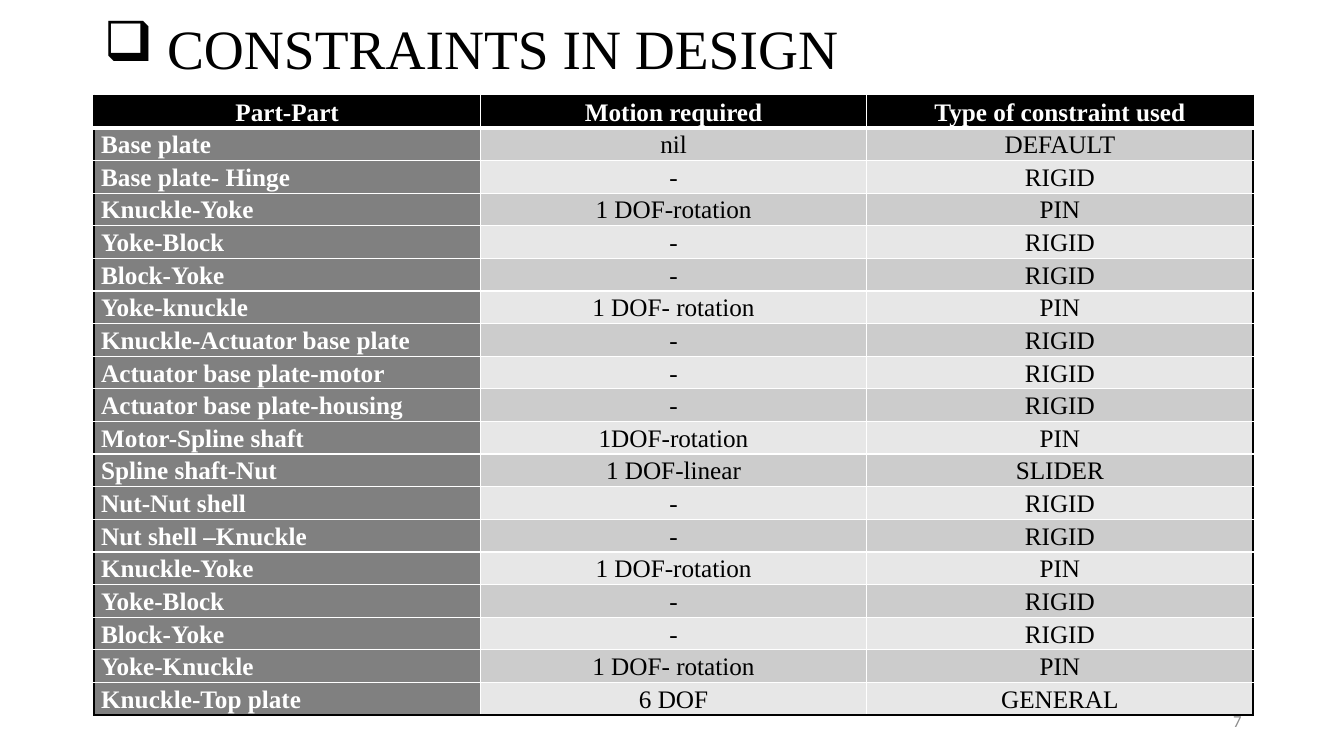
from lxml import etree
from pptx import Presentation
from pptx import util as u
from pptx.dml.color import RGBColor
from pptx.enum import text
from pptx.oxml import ns

BLACK, WHITE, GRAY = "000000", "FFFFFF", "808080"
BANDS = ("CCCCCC", "E7E7E7")

HEADINGS = ("Part-Part", "Motion required", "Type of constraint used")
CONSTRAINTS = (
    ("Base plate", "nil", "DEFAULT"),
    ("Base plate- Hinge", "-", "RIGID"),
    ("Knuckle-Yoke", "1 DOF-rotation", "PIN"),
    ("Yoke-Block", "-", "RIGID"),
    ("Block-Yoke", "-", "RIGID"),
    ("Yoke-knuckle", "1 DOF- rotation", "PIN"),
    ("Knuckle-Actuator base plate", "-", "RIGID"),
    ("Actuator base plate-motor", "-", "RIGID"),
    ("Actuator base plate-housing", "-", "RIGID"),
    ("Motor-Spline shaft", "1DOF-rotation", "PIN"),
    ("Spline shaft-Nut", "1 DOF-linear", "SLIDER"),
    ("Nut-Nut shell", "-", "RIGID"),
    ("Nut shell –Knuckle", "-", "RIGID"),
    ("Knuckle-Yoke", "1 DOF-rotation", "PIN"),
    ("Yoke-Block", "-", "RIGID"),
    ("Block-Yoke", "-", "RIGID"),
    ("Yoke-Knuckle", "1 DOF- rotation", "PIN"),
    ("Knuckle-Top plate", "6 DOF", "GENERAL"),
)


def color(hex_code):
    return RGBColor.from_string(hex_code)


def write(frame, words, *, size=18, font="Times New Roman", ink=BLACK,
          bold=False, align=text.PP_ALIGN.LEFT, spacing=1.0):
    paragraph = frame.paragraphs[0]
    paragraph.alignment = align
    paragraph.line_spacing = spacing
    run = paragraph.add_run()
    run.text = words
    run.font.size = u.Pt(size)
    run.font.name = font
    run.font.bold = bold
    run.font.color.rgb = color(ink)
    return paragraph


def set_box_bullet(paragraph, indent):
    """Hang the paragraph from a shadowed box, which is the letter q in Wingdings."""
    props = paragraph._p.get_or_add_pPr()
    props.set("marL", str(indent))
    props.set("indent", str(-indent))
    font = etree.SubElement(props, ns.qn("a:buFont"))
    font.set("typeface", "Wingdings")
    font.set("charset", "2")
    etree.SubElement(props, ns.qn("a:buChar")).set("char", "q")


def set_borders(cell, sides):
    """Draw cell borders from (hex colour, points) for left, right, top, bottom."""
    props = cell._tc.get_or_add_tcPr()
    for place, (side, (hex_code, width)) in enumerate(zip("LRTB", sides)):
        line = etree.Element(ns.qn(f"a:ln{side}"), w=str(u.Pt(width)))
        fill = etree.SubElement(line, ns.qn("a:solidFill"))
        etree.SubElement(fill, ns.qn("a:srgbClr")).set("val", hex_code)
        props.insert(place, line)


class ConstraintSlide:
    margin = 2.37
    width = 29.21
    cell_inset = 0.18

    def __init__(self, deck):
        self.slide = deck.slides.add_slide(deck.slide_layouts[6])

    def label(self, words, left, top, width, height, **style):
        box = self.slide.shapes.add_textbox(
            u.Cm(left), u.Cm(top), u.Cm(width), u.Cm(height))
        frame = box.text_frame
        frame.word_wrap = True
        frame.vertical_anchor = text.MSO_ANCHOR.MIDDLE
        return write(frame, words, **style)

    def title(self, words):
        heading = self.label(words, self.margin, 0.38, self.width, 1.83,
                             size=39.6, spacing=0.9)
        set_box_bullet(heading, u.Cm(1.59))

    def table(self, rows, top, height):
        grid = self.slide.shapes.add_table(
            len(rows), len(rows[0]), u.Cm(self.margin), u.Cm(top),
            u.Cm(self.width), u.Cm(height)).table
        for r, row in enumerate(rows):
            for c, words in enumerate(row):
                self.cell(grid.cell(r, c), words, r, c,
                          last_row=r == len(rows) - 1,
                          last_column=c == len(row) - 1)

    def cell(self, cell, words, r, c, last_row, last_column):
        header, part = r == 0, c == 0
        cell.margin_left = cell.margin_right = u.Cm(self.cell_inset)
        cell.margin_top = cell.margin_bottom = 0
        cell.vertical_anchor = text.MSO_ANCHOR.MIDDLE
        cell.fill.solid()
        cell.fill.fore_color.rgb = color(
            BLACK if header else GRAY if part else BANDS[(r - 1) % 2])
        emphasis = header or part
        write(cell.text_frame, words, spacing=1.07, bold=emphasis,
              ink=WHITE if emphasis else BLACK,
              align=text.PP_ALIGN.LEFT if part and not header
              else text.PP_ALIGN.CENTER)
        edge, inner, rule = (BLACK, 1), (WHITE, 1), (WHITE, 3)
        set_borders(cell, (
            edge if part else inner,
            edge if last_column else inner,
            edge if header else rule if r == 1 else inner,
            rule if header else edge if last_row else inner))


def main():
    deck = Presentation()
    deck.slide_width, deck.slide_height = u.Cm(33.87), u.Cm(19.05)
    page = ConstraintSlide(deck)
    page.title("CONSTRAINTS IN DESIGN")
    page.table((HEADINGS, *CONSTRAINTS), top=2.4, height=15.62)
    page.label("7", 23.92, 17.66, 7.62, 1.01, size=12, font="Calibri",
               ink="8C8C8C", align=text.PP_ALIGN.RIGHT)
    deck.save("out.pptx")


if __name__ == "__main__":
    main()
